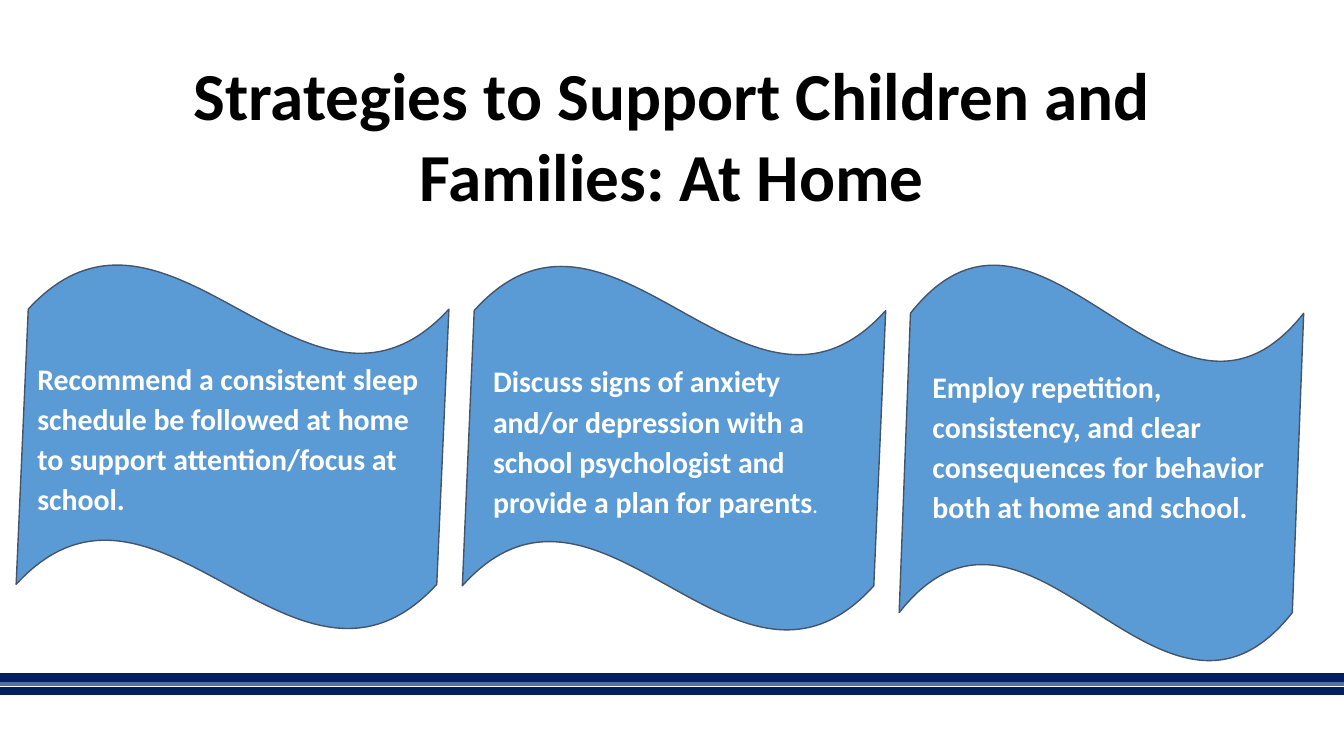
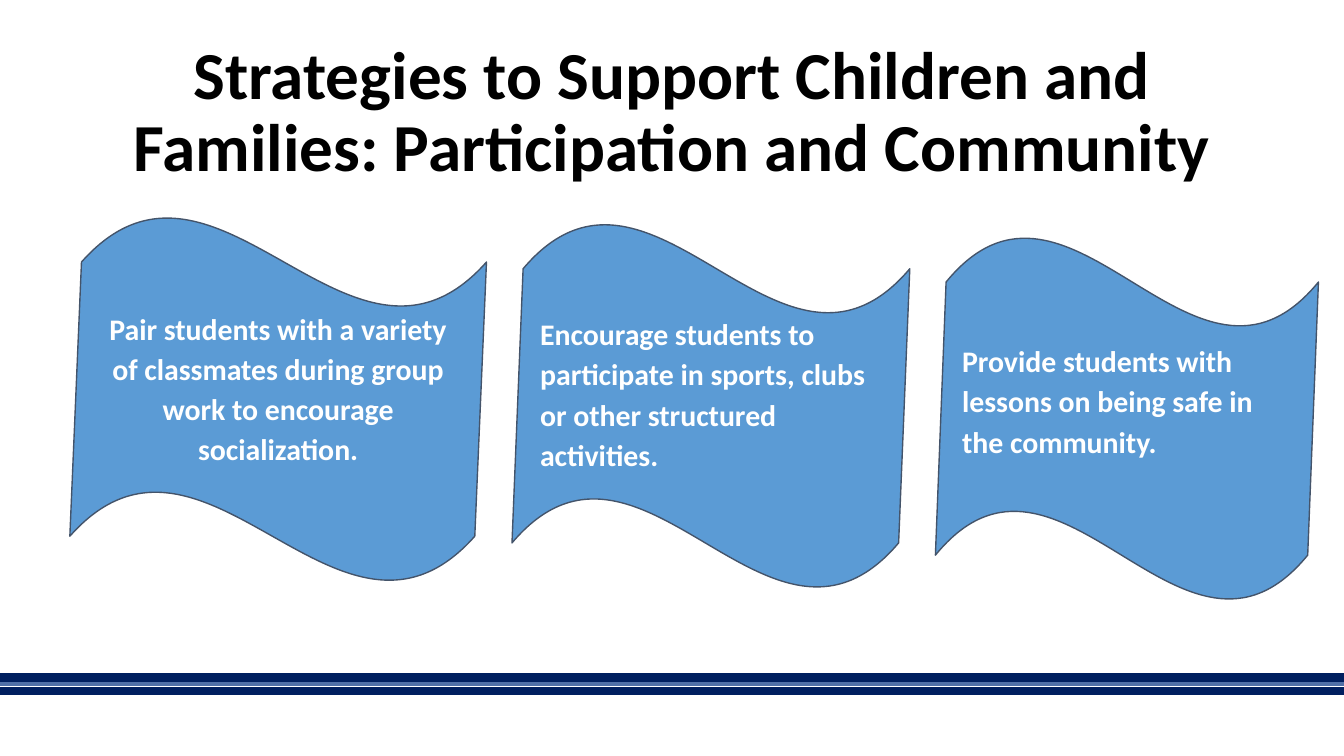
import pptx
import pptx.util
import pptx.dml.color
import pptx.enum.shapes
import pptx.enum.text
import lxml.etree

COLORS = {
    "white": "FFFFFF",
    "black": "000000",
    "navy": "001F5F",
    "steel": "5070A7",
    "wave": "5B9BD5",
    "outline": "44546A",
}
FONT = "Calibri"
ALIGN = pptx.enum.text.PP_ALIGN
ANCHOR = pptx.enum.text.MSO_ANCHOR

# Grid: 100 columns across, square cells
COLUMNS, ROWS = 100, 56.25
CELL = pptx.util.Inches(0.1)
INSET = 1

# Footer stripes: row, color, line width in points
STRIPES = [(50.4, "navy", 4.5), (50.9, "steel", 2.25), (51.4, "navy", 4.5)]

# Boxes are left, top, width, height in cells
SLIDES = [
    {
        "title": "Strategies to Support Children and Families: At Home",
        "title_box": (5.7, 3, 88.6, 10.9),
        "title_style": (ANCHOR.TOP, INSET, 1.0),
        "waves": [
            ((1.2, 19.6, 32.2, 27.3), (1.8, 25.5, 31.4, 15.8), ALIGN.LEFT,
             [("Recommend a consistent sleep schedule be followed at home "
               "to support attention/focus at school.", 16)]),
            ((34.4, 19.7, 31.5, 27.3), (35.7, 25.7, 30.1, 18.1), ALIGN.LEFT,
             [("Discuss signs of anxiety and/or depression with a school "
               "psychologist and provide a plan for parents", 16), (".", 10)]),
            ((66.9, 19.6, 30.1, 29.7), (68.4, 26.1, 27.4, 20.4), ALIGN.LEFT,
             [("Employ repetition, consistency, and clear consequences "
               "for behavior both at home and school.", 16)]),
        ],
    },
    {
        "title": "Strategies to Support Children and Families: "
                 "Participation and Community",
        "title_box": (4.4, 3, 91.2, 10.9),
        "title_style": (ANCHOR.MIDDLE, INSET / 2, 0.9),
        "waves": [
            ((5.2, 16.1, 31, 27.2), (6.1, 21.8, 29.2, 19.7), ALIGN.CENTER,
             [("Pair students with a variety of classmates during group "
               "work to encourage socialization.", 16)]),
            ((38.1, 16.6, 29.6, 27.2), (39.2, 22.2, 27.5, 18.7), ALIGN.LEFT,
             [("Encourage students to participate in sports, clubs "
               "or other structured activities.", 16)]),
            ((69.6, 17.6, 28.5, 27.1), (70.6, 24.2, 26.5, 19.1), ALIGN.LEFT,
             [("Provide students with lessons on being safe "
               "in the community.", 16)]),
        ],
    },
]


def cells(*numbers):
    return [round(number * CELL) for number in numbers]


def add_text(shapes, box, runs, color, alignment, spacing,
             anchor=ANCHOR.TOP, vertical_inset=INSET):
    frame = shapes.add_textbox(*cells(*box)).text_frame
    frame.word_wrap = True
    frame.vertical_anchor = anchor
    frame.margin_left, frame.margin_right = cells(INSET, INSET)
    frame.margin_top, frame.margin_bottom = cells(vertical_inset, vertical_inset)
    paragraph = frame.paragraphs[0]
    paragraph.alignment = alignment
    paragraph.line_spacing = spacing
    paragraph.font.name = FONT
    paragraph.font.bold = True
    paragraph.font.size = pptx.util.Pt(runs[0][1])
    paragraph.font.color.rgb = pptx.dml.color.RGBColor.from_string(COLORS[color])
    for text, size in runs:
        run = paragraph.add_run()
        run.text = text
        if size != runs[0][1]:
            run.font.size = pptx.util.Pt(size)


presentation = pptx.Presentation()
presentation.slide_width, presentation.slide_height = cells(COLUMNS, ROWS)

for content in SLIDES:
    slide = presentation.slides.add_slide(presentation.slide_layouts[6])
    slide.background.fill.solid()
    slide.background.fill.fore_color.rgb = pptx.dml.color.RGBColor.from_string(COLORS["white"])

    # Footer band
    footer = slide.shapes.add_group_shape()
    for row, color, width in STRIPES:
        stripe = footer.shapes.add_connector(
            pptx.enum.shapes.MSO_CONNECTOR.STRAIGHT, *cells(0, row, COLUMNS, row))
        stripe.line.color.rgb = pptx.dml.color.RGBColor.from_string(COLORS[color])
        stripe.line.width = pptx.util.Pt(width)
        lxml.etree.SubElement(stripe._element.spPr, pptx.oxml.ns.qn("a:effectLst"))

    # Title
    anchor, vertical_inset, spacing = content["title_style"]
    add_text(slide.shapes, content["title_box"], [(content["title"], 36)],
             "black", ALIGN.CENTER, spacing, anchor, vertical_inset)

    # Waves with their captions
    for wave_box, text_box, alignment, runs in content["waves"]:
        group = slide.shapes.add_group_shape()
        wave = group.shapes.add_shape(
            pptx.enum.shapes.MSO_SHAPE.WAVE, *cells(*wave_box))
        wave.adjustments[0] = 0.125
        wave.adjustments[1] = -0.014
        wave.shadow.inherit = False
        wave.fill.solid()
        wave.fill.fore_color.rgb = pptx.dml.color.RGBColor.from_string(COLORS["wave"])
        wave.line.color.rgb = pptx.dml.color.RGBColor.from_string(COLORS["outline"])
        wave.line.width = pptx.util.Pt(0.75)
        add_text(group.shapes, text_box, runs, "white", alignment, 1.12)

presentation.save("out.pptx")
